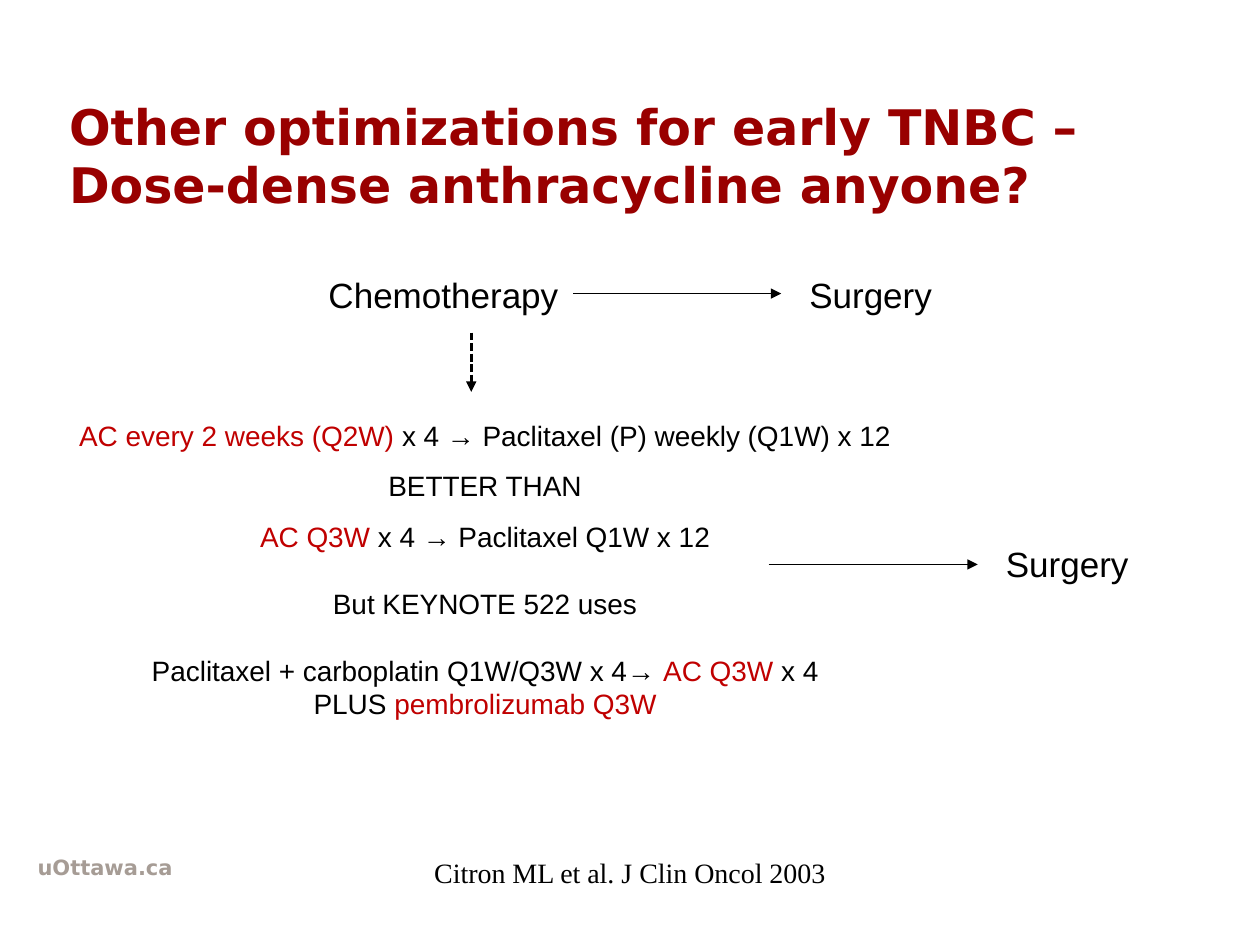
"""Build the slide on dose-dense anthracycline for early TNBC."""
from lxml.etree import SubElement
from pptx import Presentation
from pptx.dml.color import RGBColor
from pptx.enum.dml import MSO_LINE
from pptx.enum.shapes import MSO_CONNECTOR
from pptx.enum.text import MSO_ANCHOR, PP_ALIGN
from pptx.oxml.ns import qn
from pptx.util import Inches, Pt

BLACK = RGBColor(0x00, 0x00, 0x00)
RED = RGBColor(0xC0, 0x00, 0x00)
DARK_RED = RGBColor(0x99, 0x00, 0x00)
TAUPE = RGBColor(0xA6, 0x9C, 0x95)

TITLE = "Other optimizations for early TNBC – Dose-dense anthracycline anyone?"
FOOTER = "uOttawa.ca"
CITATION = "Citron ML et al. J Clin Oncol 2003"
STEPS = [
    ("Chemotherapy", (2.38, 2.12, 2.28, 0.44)),
    ("Surgery", (6.2, 2.12, 1.42, 0.44)),
    ("Surgery", (7.76, 4.26, 1.42, 0.44)),
]
ARROWS = [
    ((4.55, 2.33), (6.2, 2.33), 0.75, None),
    ((3.74, 2.64), (3.74, 3.11), 1.5, MSO_LINE.SQUARE_DOT),
    ((6.1, 4.48), (7.76, 4.48), 0.75, None),
]
REGIMENS = [
    (0, [("AC every 2 weeks (Q2W) ", RED),
         ("x 4 → Paclitaxel (P) weekly (Q1W) x 12", BLACK)]),
    (9.6, [("BETTER THAN", BLACK)]),
    (9.6, [("AC Q3W ", RED), ("x 4 → Paclitaxel Q1W x 12", BLACK)]),
    (19.2, [("But KEYNOTE 522 uses", BLACK)]),
    (19.2, [("Paclitaxel + carboplatin Q1W/Q3W x 4→ ", BLACK),
            ("AC Q3W ", RED), ("x 4", BLACK)]),
    (0, [("PLUS ", BLACK), ("pembrolizumab Q3W", RED)]),
]


def add_box(s, box):
    tf = s.shapes.add_textbox(*map(Inches, box)).text_frame
    tf.word_wrap = True
    return tf


def style(p, font, size, align, bold=False):
    p.alignment = align
    p.font.name = font
    p.font.size = Pt(size)
    p.font.bold = bold


def add_label(s, text, box, font, size, color=BLACK, align=PP_ALIGN.CENTER, bold=False):
    tf = add_box(s, box)
    p = tf.paragraphs[0]
    p.text = text
    style(p, font, size, align, bold)
    p.font.color.rgb = color
    return tf


def add_regimens(s, box):
    tf = add_box(s, box)
    for i, (gap, runs) in enumerate(REGIMENS):
        p = tf.add_paragraph() if i else tf.paragraphs[0]
        style(p, "Arial", 16, PP_ALIGN.CENTER)
        p.line_spacing = Pt(19.2)
        p.space_before = Pt(gap)
        for text, color in runs:
            r = p.add_run()
            r.text = text
            r.font.color.rgb = color


def add_arrow(s, start, end, width, dash):
    line = s.shapes.add_connector(MSO_CONNECTOR.STRAIGHT, *map(Inches, start + end))
    line.line.color.rgb = BLACK
    line.line.width = Pt(width)
    if dash:
        line.line.dash_style = dash
    SubElement(line.line._get_or_add_ln(), qn("a:tailEnd"), type="triangle")
    SubElement(line._element.spPr, qn("a:effectLst"))


def main():
    prs = Presentation()
    prs.slide_width, prs.slide_height = Inches(10), Inches(7.5)
    s = prs.slides.add_slide(prs.slide_layouts[6])
    add_label(s, FOOTER, (0.2, 6.73, 4.96, 0.39), "DejaVu Sans", 12,
              TAUPE, PP_ALIGN.LEFT, True)
    title = add_label(s, TITLE, (0.45, 0.76, 8.5, 0.94), "DejaVu Sans", 28,
                      DARK_RED, PP_ALIGN.LEFT, True)
    title.vertical_anchor = MSO_ANCHOR.MIDDLE
    add_label(s, CITATION, (2.48, 6.74, 5.04, 0.37), "Times New Roman", 16)
    for text, box in STEPS:
        add_label(s, text, box, "Arial", 20)
    for arrow in ARROWS:
        add_arrow(s, *arrow)
    add_regimens(s, (0.42, 3.27, 6.86, 2.79))
    prs.save("out.pptx")


if __name__ == "__main__":
    main()
